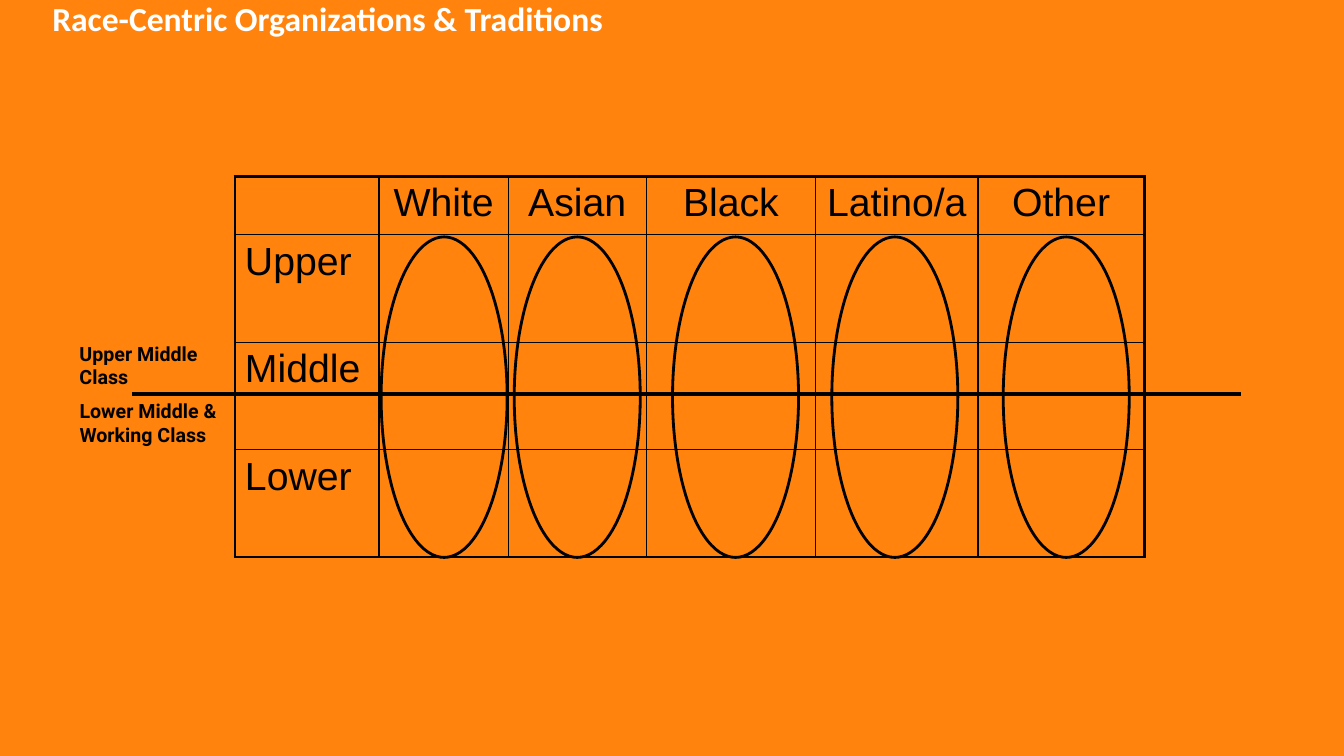
from dataclasses import dataclass

from lxml import etree
from pptx import Presentation
from pptx.dml.color import RGBColor
from pptx.enum.shapes import MSO_CONNECTOR, MSO_SHAPE
from pptx.enum.text import MSO_ANCHOR, PP_ALIGN
from pptx.oxml.ns import qn
from pptx.slide import Slide
from pptx.table import _Cell
from pptx.text.text import _Paragraph
from pptx.util import Inches, Pt

ORANGE = RGBColor(0xFF, 0x83, 0x0C)
BLACK = RGBColor(0x00, 0x00, 0x00)
WHITE = RGBColor(0xFF, 0xFF, 0xFF)
STRAIGHT = MSO_CONNECTOR.STRAIGHT
OVAL = MSO_SHAPE.OVAL
CENTER = PP_ALIGN.CENTER
LEFT = PP_ALIGN.LEFT
TOP = MSO_ANCHOR.TOP
MIDDLE = MSO_ANCHOR.MIDDLE


@dataclass(frozen=True)
class Style:
    font: str
    size: float
    color: RGBColor
    bold: bool = False


@dataclass(frozen=True)
class Caption:
    left: float
    top: float
    width: float
    height: float
    paragraphs: tuple[str, ...]
    style: Style
    anchor: MSO_ANCHOR = TOP
    line_spacing: float = 1.0


@dataclass(frozen=True)
class Race:
    name: str
    column_width: float
    oval_left: float


TITLE_STYLE = Style("Calibri", 24, WHITE, True)
GRID_STYLE = Style("Arial", 28, BLACK)
CLASS_STYLE = Style("Roboto", 14, BLACK, True)

RACES = (
    Race("White", 1.28, 3.78),
    Race("Asian", 1.37, 5.1),
    Race("Black", 1.68, 6.67),
    Race("Latino/a", 1.61, 8.25),
    Race("Other", 1.65, 9.95),
)
CLASSES = ("Upper", "Middle", "Lower")

GRID_LEFT, GRID_TOP = 2.33, 1.75
CLASS_COLUMN_WIDTH = 1.43
HEADER_HEIGHT, CLASS_HEIGHT = 0.58, 1.065
THIN, THICK = 1, 2.25
OVAL_TOP, OVAL_WIDTH, OVAL_HEIGHT = 2.35, 1.25, 3.18
DIVIDE_Y = 3.91

TITLE = Caption(0.42, 0, 11.82, 0.4, ("Race-Centric Organizations & Traditions",),
                TITLE_STYLE, MIDDLE, 0.9)
CLASS_CAPTIONS = (
    Caption(0.69, 3.34, 1.44, 0.57, ("Upper Middle", "Class"), CLASS_STYLE),
    Caption(0.69, DIVIDE_Y, 1.65, 0.57, ("Lower Middle &\nWorking Class",), CLASS_STYLE),
)


def write(paragraph: _Paragraph, text: str, style: Style) -> None:
    for number, line in enumerate(text.split("\n")):
        if number:
            paragraph.add_line_break()
        run = paragraph.add_run()
        run.text = line
        run.font.name = style.font
        run.font.size = Pt(style.size)
        run.font.bold = style.bold
        run.font.color.rgb = style.color


def draw_caption(slide: Slide, caption: Caption) -> None:
    frame = slide.shapes.add_textbox(
        Inches(caption.left), Inches(caption.top),
        Inches(caption.width), Inches(caption.height)).text_frame
    frame.word_wrap = caption is TITLE
    frame.vertical_anchor = caption.anchor
    for number, text in enumerate(caption.paragraphs):
        paragraph = frame.add_paragraph() if number else frame.paragraphs[0]
        paragraph.line_spacing = caption.line_spacing
        write(paragraph, text, caption.style)


def set_borders(cell: _Cell, left: float, right: float, top: float, bottom: float) -> None:
    properties = cell._tc.get_or_add_tcPr()
    widths = {"a:lnL": left, "a:lnR": right, "a:lnT": top, "a:lnB": bottom}
    for position, (tag, width) in enumerate(widths.items()):
        border = etree.Element(qn(tag), w=str(Pt(width)))
        fill = etree.SubElement(border, qn("a:solidFill"))
        etree.SubElement(fill, qn("a:srgbClr"), val=str(BLACK))
        properties.insert(position, border)


def draw_grid(slide: Slide) -> None:
    widths = [CLASS_COLUMN_WIDTH] + [race.column_width for race in RACES]
    heights = [HEADER_HEIGHT] + [CLASS_HEIGHT] * len(CLASSES)
    grid = slide.shapes.add_table(
        len(heights), len(widths), Inches(GRID_LEFT), Inches(GRID_TOP),
        Inches(sum(widths)), Inches(sum(heights))).table
    grid.first_row = False
    grid.horz_banding = False
    for column, width in zip(grid.columns, widths):
        column.width = Inches(width)
    for row, height in zip(grid.rows, heights):
        row.height = Inches(height)

    last_row, last_column = len(heights) - 1, len(widths) - 1
    header = [""] + [race.name for race in RACES]
    for r in range(len(heights)):
        for c in range(len(widths)):
            cell = grid.cell(r, c)
            cell.fill.background()
            set_borders(cell,
                        left=THICK if c == 0 else THIN,
                        right=THICK if c == last_column else THIN,
                        top=THICK if r == 0 else THIN,
                        bottom=THICK if r == last_row else THIN)
            text = header[c] if r == 0 else CLASSES[r - 1] if c == 0 else ""
            if text:
                paragraph = cell.text_frame.paragraphs[0]
                paragraph.alignment = CENTER if r == 0 else LEFT
                write(paragraph, text, GRID_STYLE)


def draw_class_divide(slide: Slide) -> None:
    divide = slide.shapes.add_connector(
        STRAIGHT, Inches(1.31), Inches(DIVIDE_Y), Inches(12.31), Inches(DIVIDE_Y))
    divide.line.color.rgb = BLACK
    divide.line.width = Pt(3)
    etree.SubElement(divide._element.spPr, qn("a:effectLst"))


def draw_race_oval(slide: Slide, race: Race) -> None:
    oval = slide.shapes.add_shape(
        OVAL, Inches(race.oval_left), Inches(OVAL_TOP),
        Inches(OVAL_WIDTH), Inches(OVAL_HEIGHT))
    oval.shadow.inherit = False
    oval.fill.background()
    oval.line.color.rgb = BLACK
    oval.line.width = Pt(2)


def main() -> None:
    deck = Presentation()
    deck.slide_width, deck.slide_height = Inches(13.33), Inches(7.5)
    slide = deck.slides.add_slide(deck.slide_layouts[6])
    slide.background.fill.solid()
    slide.background.fill.fore_color.rgb = ORANGE

    # Title and the grid of race by class
    draw_caption(slide, TITLE)
    draw_grid(slide)

    # Line between the classes, with its captions
    draw_class_divide(slide)
    for caption in CLASS_CAPTIONS:
        draw_caption(slide, caption)

    # One oval for each race, across all classes
    for race in RACES:
        draw_race_oval(slide, race)

    deck.save("out.pptx")


if __name__ == "__main__":
    main()
